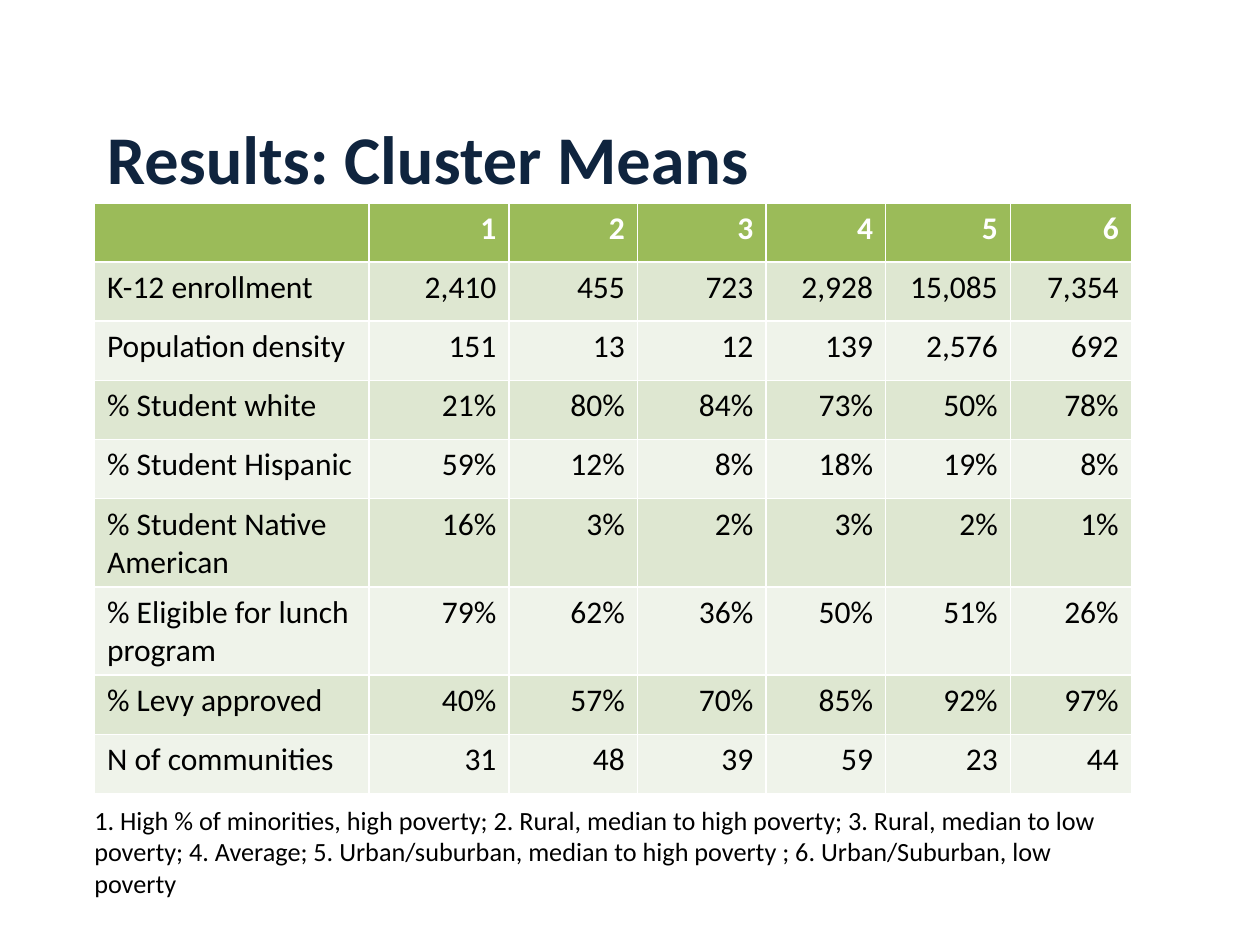
from pptx import Presentation
from pptx.dml.color import RGBColor
from pptx.enum.text import MSO_ANCHOR as Anchor, PP_ALIGN as Align
from pptx.util import Inches, Pt

HEAD = ["", "1", "2", "3", "4", "5", "6"]
ROWS = [
    ["K-12 enrollment", "2,410", "455", "723", "2,928", "15,085", "7,354"],
    ["Population density", "151", "13", "12", "139", "2,576", "692"],
    ["% Student white", "21%", "80%", "84%", "73%", "50%", "78%"],
    ["% Student Hispanic", "59%", "12%", "8%", "18%", "19%", "8%"],
    ["% Student Native American", "16%", "3%", "2%", "3%", "2%", "1%"],
    ["% Eligible for lunch program", "79%", "62%", "36%", "50%", "51%", "26%"],
    ["% Levy approved", "40%", "57%", "70%", "85%", "92%", "97%"],
    ["N of communities", "31", "48", "39", "59", "23", "44"],
]
WIDTHS = [2.18, 1.11, 1.02, 1.02, 0.95, 0.99, 0.96]
BANDS = ["DEE7D1", "EFF3EA"]
NOTE = (
    "1. High % of minorities, high poverty; 2. Rural, median to high poverty; "
    "3. Rural, median to low poverty; 4. Average; 5. Urban/suburban, median to "
    "high poverty ; 6. Urban/Suburban, low poverty"
)


def paint(part, color):
    part.rgb = RGBColor.from_string(color)


def style(para, size, color, bold=False):
    form = {"name": "Calibri", "size": Pt(size), "bold": bold}
    for key, value in form.items():
        setattr(para.font, key, value)
    paint(para.font.color, color)


def add_text(slide, box, text, size, color, bold=False, anchor=Anchor.TOP):
    frame = slide.shapes.add_textbox(*map(Inches, box)).text_frame
    for key, value in {"word_wrap": True, "vertical_anchor": anchor}.items():
        setattr(frame, key, value)
    para = frame.paragraphs[0]
    para.text = text
    style(para, size, color, bold)


def add_title(slide, box):
    add_text(slide, box, "Results: Cluster Means", 39, "0F243E", True, Anchor.MIDDLE)


def add_means(slide, box):
    data = [HEAD] + ROWS
    shape = slide.shapes.add_table(len(data), len(HEAD), *map(Inches, box))
    table = shape.table
    for col, width in zip(table.columns, WIDTHS):
        col.width = Inches(width)
    for r, values in enumerate(data):
        table.rows[r].height = Inches(0.47)
        head = r == 0
        fill = "9BBB59" if head else BANDS[(r - 1) % 2]
        for c, value in enumerate(values):
            cell = table.cell(r, c)
            cell.fill.solid()
            paint(cell.fill.fore_color, fill)
            para = cell.text_frame.paragraphs[0]
            para.text = value
            para.alignment = Align.RIGHT if c else Align.LEFT
            style(para, 18, "FFFFFF" if head else "000000", head)


def add_note(slide, box):
    add_text(slide, box, NOTE, 15, "000000")


def main():
    deck = Presentation()
    deck.slide_width, deck.slide_height = Inches(10), Inches(7.5)
    slide = deck.slides.add_slide(deck.slide_layouts[6])
    add_title(slide, (0.75, 0.83, 8.69, 0.84))
    add_means(slide, (0.75, 1.61, sum(WIDTHS), 4.72))
    add_note(slide, (0.65, 6.33, 8.26, 0.88))
    deck.save("out.pptx")


if __name__ == "__main__":
    main()
